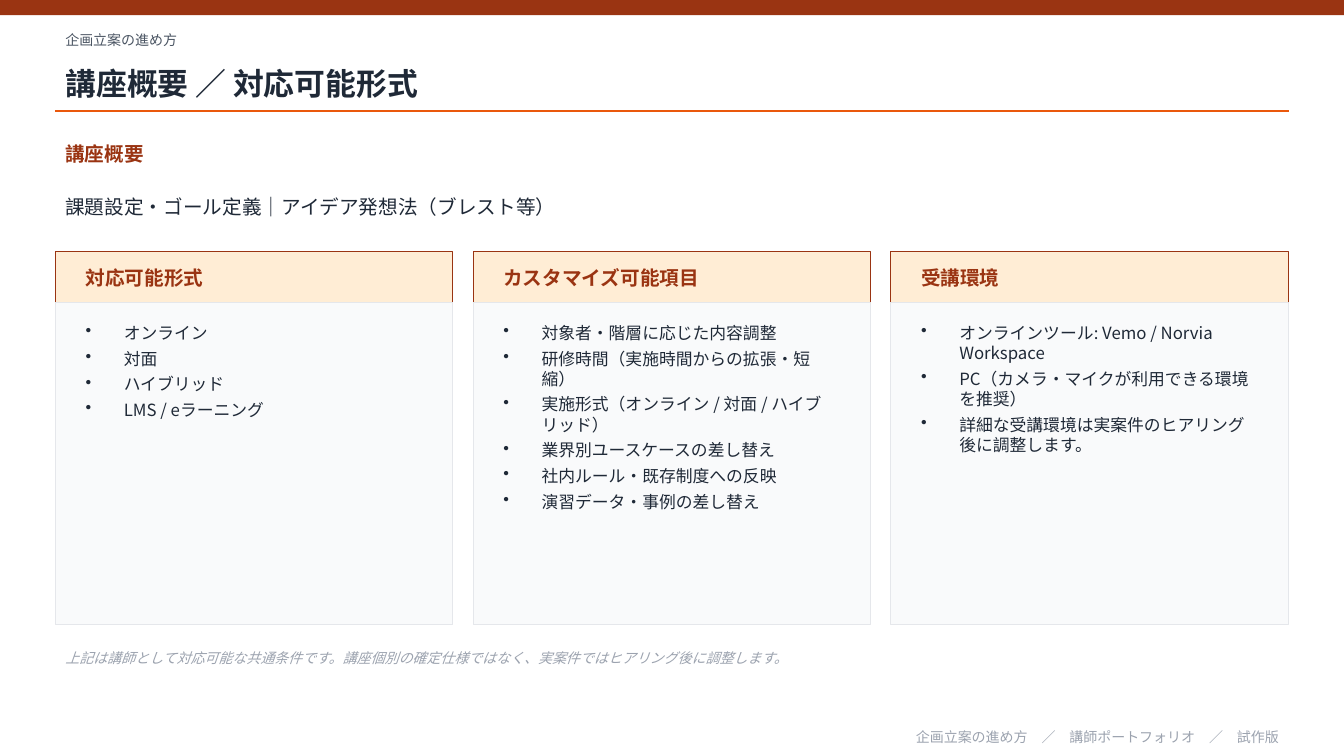
from pptx import Presentation
from pptx.dml.color import RGBColor
from pptx.enum.shapes import MSO_CONNECTOR, MSO_SHAPE
from pptx.enum.text import MSO_ANCHOR, MSO_AUTO_SIZE, PP_ALIGN
from pptx.oxml.ns import qn
from pptx.util import Inches, Pt
from lxml.etree import SubElement

# Content
COURSE = "企画立案の進め方"
TITLE = "講座概要 ／ 対応可能形式"
SECTION = "講座概要"
SUMMARY = "課題設定・ゴール定義｜アイデア発想法（ブレスト等）"
CARDS = [
    ("対応可能形式", ["オンライン", "対面", "ハイブリッド", "LMS / eラーニング"]),
    ("カスタマイズ可能項目", [
        "対象者・階層に応じた内容調整",
        "研修時間（実施時間からの拡張・短縮）",
        "実施形式（オンライン / 対面 / ハイブリッド）",
        "業界別ユースケースの差し替え",
        "社内ルール・既存制度への反映",
        "演習データ・事例の差し替え",
    ]),
    ("受講環境", [
        "オンラインツール: Vemo / Norvia Workspace",
        "PC（カメラ・マイクが利用できる環境を推奨）",
        "詳細な受講環境は実案件のヒアリング後に調整します。",
    ]),
]
NOTE = ("上記は講師として対応可能な共通条件です。"
        "講座個別の確定仕様ではなく、実案件ではヒアリング後に調整します。")
FOOTER = "企画立案の進め方　／　講師ポートフォリオ　／　試作版"

# Style
FONT = "Noto Sans CJK JP"
RUST, ORANGE, PEACH = "9A3412", "EA580C", "FFEDD5"
INK, SLATE, MUTED = "1F2937", "4B5563", "9CA3AF"
PANEL, BORDER = "F9FAFB", "E5E7EB"

# Layout
SLIDE_W, SLIDE_H = 13.33, 7.5
MARGIN = 0.55
CONTENT_W = SLIDE_W - 2 * MARGIN
GAP, PADDING = 0.2, 0.2
CARD_W = (CONTENT_W - GAP * (len(CARDS) - 1)) / len(CARDS)
HEAD_TOP, HEAD_H, BODY_H = 2.5, 0.5, 3.2
BODY_TOP = HEAD_TOP + HEAD_H
BULLET_INDENT = 0.38

presentation = Presentation()
presentation.slide_width = Inches(SLIDE_W)
presentation.slide_height = Inches(SLIDE_H)
slide = presentation.slides.add_slide(presentation.slide_layouts[5])


def color(value):
    return RGBColor.from_string(value)


def box(left, top, width, height):
    return [Inches(length) for length in (left, top, width, height)]


def add_panel(bounds, fill, line=None):
    panel = slide.shapes.add_shape(MSO_SHAPE.RECTANGLE, *box(*bounds))
    panel.shadow.inherit = False
    panel.fill.solid()
    panel.fill.fore_color.rgb = color(fill)
    if line:
        panel.line.color.rgb = color(line)
        panel.line.width = Pt(0.75)
    else:
        panel.line.fill.background()


def format_frame(frame, size, ink, bold=False, italic=False,
                 anchor=MSO_ANCHOR.MIDDLE, align=PP_ALIGN.LEFT):
    frame.word_wrap = True
    frame.auto_size = MSO_AUTO_SIZE.NONE
    frame.vertical_anchor = anchor
    for paragraph in frame.paragraphs:
        paragraph.alignment = align
        for run in paragraph.runs:
            font = run.font
            font.size, font.bold, font.italic = Pt(size), bold, italic
            font.color.rgb = color(ink)
            font.name = FONT
            SubElement(run._r.get_or_add_rPr(), qn("a:ea"), typeface=FONT)


def add_text(bounds, text, size, ink, **style):
    frame = slide.shapes.add_textbox(*box(*bounds)).text_frame
    frame.text = text
    format_frame(frame, size, ink, **style)
    return frame


def add_bullets(frame):
    for paragraph in frame.paragraphs:
        properties = paragraph._p.get_or_add_pPr()
        properties.set("marL", str(Inches(BULLET_INDENT)))
        properties.set("indent", str(-Inches(BULLET_INDENT)))
        SubElement(properties, qn("a:buChar"), char="•")
        paragraph.space_after = Pt(4)


# Header
add_panel((0, 0, SLIDE_W, 0.15), RUST)
add_text((MARGIN, 0.25, CONTENT_W, 0.3), COURSE, 10, SLATE)
title = slide.shapes.title
title.left, title.top, title.width, title.height = box(MARGIN, 0.55, CONTENT_W, 0.55)
title.text_frame.text = TITLE
format_frame(title.text_frame, 22, INK, bold=True)
rule = slide.shapes.add_connector(
    MSO_CONNECTOR.STRAIGHT,
    Inches(MARGIN), Inches(1.1), Inches(MARGIN + CONTENT_W), Inches(1.1))
rule.line.color.rgb = color(ORANGE)
rule.line.width = Pt(1)
SubElement(rule._element.spPr, qn("a:effectLst"))

# Overview
add_text((MARGIN, 1.35, CONTENT_W, 0.35), SECTION, 14, RUST, bold=True)
add_text((MARGIN, 1.75, CONTENT_W, 0.6), SUMMARY, 14, INK)

# Cards
for column, (heading, items) in enumerate(CARDS):
    left = MARGIN + column * (CARD_W + GAP)
    text_left, text_w = left + PADDING, CARD_W - 2 * PADDING
    add_panel((left, HEAD_TOP, CARD_W, HEAD_H), PEACH, RUST)
    add_text((text_left, HEAD_TOP, text_w, HEAD_H), heading, 14, RUST, bold=True)
    add_panel((left, BODY_TOP, CARD_W, BODY_H), PANEL, BORDER)
    add_bullets(add_text((text_left, BODY_TOP + 0.15, text_w, 2.85),
                         "\n".join(items), 12, INK, anchor=MSO_ANCHOR.TOP))

# Note and footer
add_text((MARGIN, 6.35, CONTENT_W, 0.35), NOTE, 10, MUTED, italic=True)
add_text((MARGIN, 7.2, CONTENT_W, 0.22), FOOTER, 10, MUTED, align=PP_ALIGN.RIGHT)

presentation.save("out.pptx")
